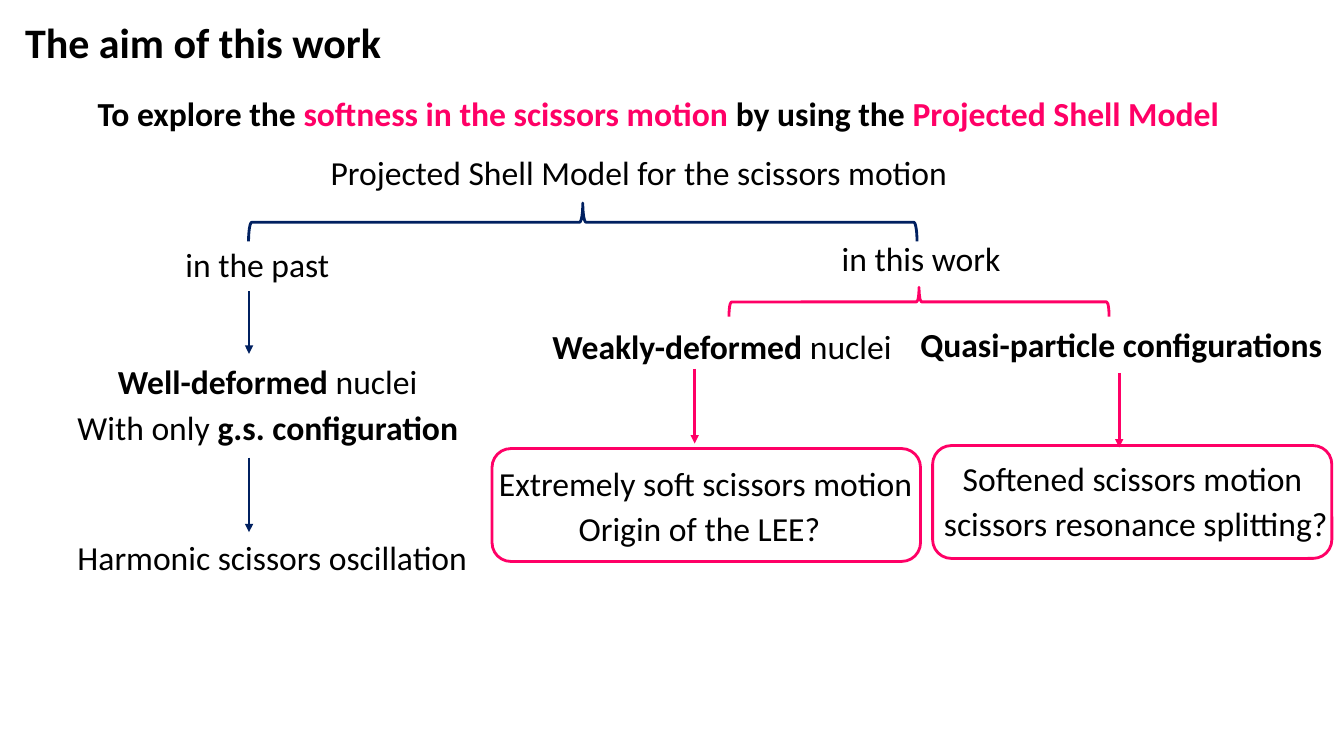
from lxml import etree
from pptx import Presentation, util as u
from pptx.dml.color import RGBColor
from pptx.enum import shapes, text
from pptx.oxml.ns import qn

PX = 9144  # EMU per px, 100 px to the inch
THEME = {
    "font": "Calibri",
    "ink": RGBColor.from_string("000000"),
    "pink": RGBColor.from_string("FF0066"),
    "navy": RGBColor.from_string("002060"),
    "title": u.Pt(30),
    "body": u.Pt(24),
    "line": u.Pt(2),
}

deck = Presentation()
deck.slide_width, deck.slide_height = 1333 * PX, 750 * PX
page = deck.slides.add_slide(deck.slide_layouts[6])


def add_text(left, top, width, spans, size="body", height=50, centred=False):
    """Add a one-line box; each span is (words, bold, colour name)."""
    box = page.shapes.add_textbox(left * PX, top * PX, width * PX, height * PX)
    box.text_frame.word_wrap = True
    para = box.text_frame.paragraphs[0]
    para.alignment = text.PP_ALIGN.CENTER if centred else text.PP_ALIGN.LEFT
    para.font.name, para.font.size = THEME["font"], THEME[size]
    for words, bold, colour in spans:
        span = para.add_run()
        span.text = words
        span.font.bold = bold
        span.font.color.rgb = THEME[colour]


def add_outline(kind, left, top, width, height, colour, rotation=0):
    """Add an unfilled preset shape with a coloured outline."""
    shape = page.shapes.add_shape(kind, left * PX, top * PX, width * PX, height * PX)
    shape.rotation = rotation
    shape.shadow.inherit = False
    shape.fill.background()
    shape.line.color.rgb = THEME[colour]
    shape.line.width = THEME["line"]


# Title and aim
add_text(15, 11, 888, [("The aim of this work", True, "ink")], "title", 61)
add_text(87, 87, 1145, [
    ("To explore the ", True, "ink"),
    ("softness in the scissors motion ", True, "pink"),
    ("by using the ", True, "ink"),
    ("Projected Shell Model", True, "pink"),
])

# Plain and bold labels of the tree
for left, top, width, words, bold in [
    (318, 146, 695, "Projected Shell Model for the scissors motion", False),
    (174, 237, 211, "in the past", False),
    (825, 231, 216, "in this work", False),
    (67, 528, 419, "Harmonic scissors oscillation", False),
    (903, 316, 446, "Quasi-particle configurations", True),
    (485, 454, 431, "Extremely soft scissors motion", False),
    (564, 499, 352, "Origin of the LEE?", False),
    (945, 449, 388, "Softened scissors motion", False),
]:
    add_text(left, top, width, [(words, bold, "ink")])
add_text(921, 494, 411, [("scissors resonance splitting?", False, "ink")], centred=True)

# Labels of mixed weight
add_text(-18, 353, 567, [("Well-deformed ", True, "ink"), ("nuclei", False, "ink")],
         centred=True)
add_text(67, 399, 425, [("With only ", False, "ink"), ("g.s. configuration", True, "ink")])
add_text(538, 318, 388, [("Weakly-deformed", True, "ink"), (" nuclei", False, "ink")])

# Braces, turned to point upwards
for left, top, width, height, colour in [
    (559, -111, 38, 663, "navy"),
    (897, 111, 29, 377, "pink"),
]:
    add_outline(shapes.MSO_SHAPE.LEFT_BRACE, left, top, width, height, colour, 90)

# Result frames
for left, top, width in [(488, 445, 425), (925, 442, 396)]:
    add_outline(shapes.MSO_SHAPE.ROUNDED_RECTANGLE, left, top, width, 112, "pink")

# Downward arrows
for x, top, bottom, colour in [
    (247, 289, 351, "navy"),
    (247, 454, 528, "navy"),
    (689, 366, 440, "pink"),
    (1110, 370, 444, "pink"),
]:
    arrow = page.shapes.add_connector(
        shapes.MSO_CONNECTOR.STRAIGHT, x * PX, top * PX, x * PX, bottom * PX)
    arrow.line.color.rgb = THEME[colour]
    arrow.line.width = THEME["line"]
    etree.SubElement(arrow.line._get_or_add_ln(), qn("a:tailEnd"), type="triangle")
    etree.SubElement(arrow._element.spPr, qn("a:effectLst"))

deck.save("out.pptx")
